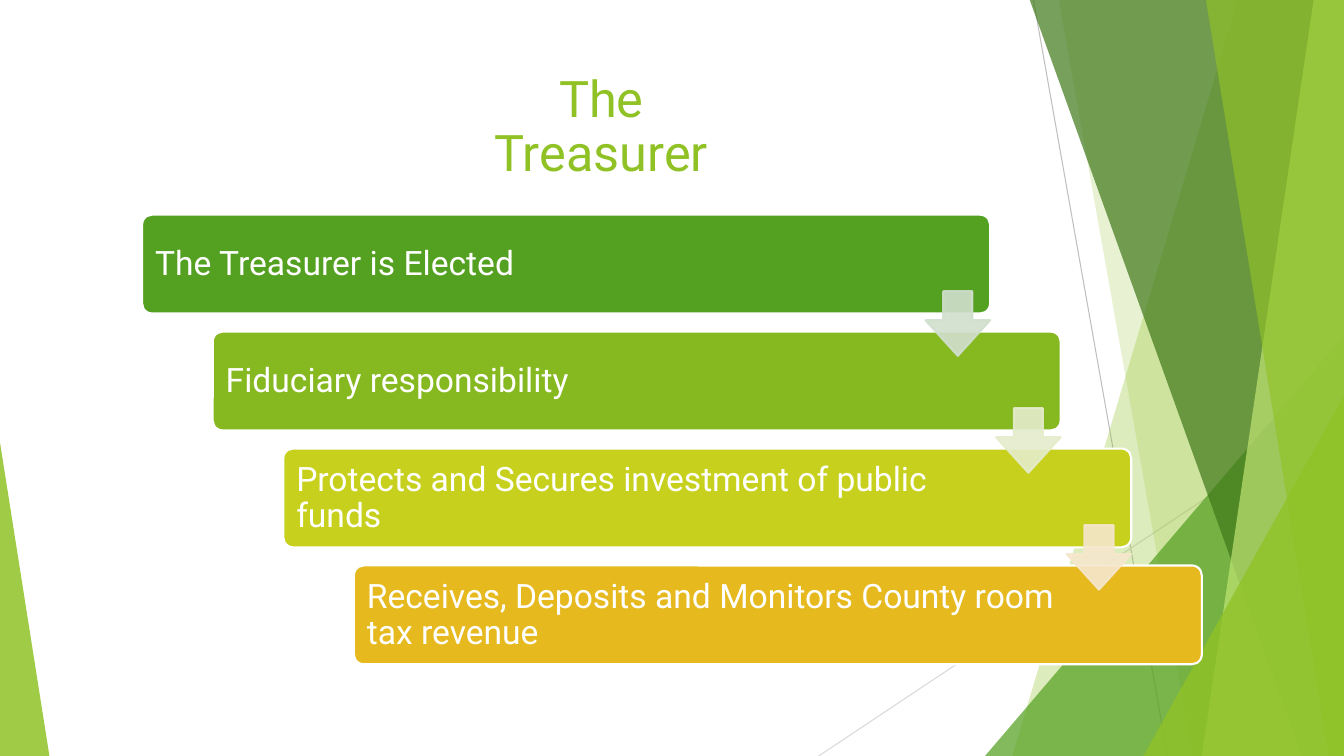
from typing import NamedTuple

from lxml import etree
from pptx import Presentation
from pptx.dml.color import RGBColor
from pptx.enum.shapes import MSO_CONNECTOR, MSO_SHAPE
from pptx.enum.text import MSO_ANCHOR, PP_ALIGN
from pptx.oxml.ns import qn
from pptx.util import Emu, Pt

PX = 9144  # 100 px to the inch
WIDTH, HEIGHT = 1333, 750
FONT = "Roboto"
STRAIGHT = MSO_CONNECTOR.STRAIGHT
TRIANGLE = MSO_SHAPE.ISOSCELES_TRIANGLE
ROUNDED = MSO_SHAPE.ROUNDED_RECTANGLE
DOWN_ARROW = MSO_SHAPE.DOWN_ARROW
LEFT, CENTER = PP_ALIGN.LEFT, PP_ALIGN.CENTER
MIDDLE = MSO_ANCHOR.MIDDLE

COLORS = {
    "white": "FFFFFF", "gray": "BFBFBF", "light gray": "D9D9D9",
    "lime": "90C226", "green": "54A021", "dark green": "3F7819",
    "pale lime": "C0E474", "leaf": "86B820", "yellow green": "C7D01D",
    "gold": "E6B91E", "pale green": "D1DFCD", "pale leaf": "E5ECCB",
    "pale gold": "F5E7CD",
}


class Box(NamedTuple):
    left: int
    top: int
    width: int
    height: int

    def moved(self, dx: int, dy: int) -> "Box":
        return Box(self.left + dx, self.top + dy, self.width, self.height)

    def emu(self) -> list[Emu]:
        return [Emu(length * PX) for length in self]


class Ray(NamedTuple):
    start: tuple[int, int]
    end: tuple[int, int]
    color: str


class Band(NamedTuple):
    """A strip from the slide's top to its bottom, closed by the right edge."""
    top_x: int
    bottom_x: int
    color: str
    opacity: int


class Corner(NamedTuple):
    box: Box
    peak: float
    color: str
    opacity: int


class Step(NamedTuple):
    text: str
    color: str
    arrow_color: str | None


RAYS = [
    Ray((1025, 0), (1158, HEIGHT), "gray"),
    Ray((WIDTH, 403), (812, HEIGHT), "light gray"),
]
FACETS = [
    Band(1228, 1004, "lime", 30),
    Band(1050, 1183, "lime", 20),
    Corner(Box(977, 333, 356, 417), 1, "green", 72),
    Band(1021, 1291, "dark green", 70),
    Band(1303, 1192, "pale lime", 70),
    Band(1196, 1318, "lime", 65),
    Corner(Box(1134, 393, 199, 357), 1, "lime", 80),
    Corner(Box(0, 439, 49, 311), 0, "lime", 85),
]
STEPS = [
    Step("The Treasurer is Elected", "green", "pale green"),
    Step("Fiduciary responsibility", "leaf", "pale leaf"),
    Step("Protects and Secures investment of public funds",
         "yellow green", "pale gold"),
    Step("Receives, Deposits and Monitors County room tax revenue",
         "gold", None),
]
TITLE_BOX = Box(0, 67, 1193, 120)
FIRST_CARD = Box(141, 213, 841, 98)
FIRST_LABEL = Box(144, 216, 702, 93)
FIRST_ARROW = Box(918, 289, 64, 64)
STEP_RIGHT, STEP_DOWN = 70, 116


def rgb(color: str) -> RGBColor:
    return RGBColor.from_string(COLORS[color])


def set_opacity(shape, opacity: int) -> None:
    """Apply one opacity to every solid colour of the fill and line."""
    for color in shape._element.spPr.iter(qn("a:srgbClr")):
        etree.SubElement(color, qn("a:alpha"), val=str(opacity * 1000))


def paint(shape, color: str, outline: str | None = None,
          opacity: int = 100) -> None:
    shape.shadow.inherit = False
    shape.fill.solid()
    shape.fill.fore_color.rgb = rgb(color)
    if outline:
        shape.line.color.rgb = rgb(outline)
        shape.line.width = Pt(1.5)
    else:
        shape.line.fill.background()
    if opacity < 100:
        set_opacity(shape, opacity)


def add_preset(shapes, preset, box: Box, adjustments: list[float], color: str,
               outline: str | None = None, opacity: int = 100) -> None:
    shape = shapes.add_shape(preset, *box.emu())
    for index, value in enumerate(adjustments):
        shape.adjustments[index] = value
    paint(shape, color, outline, opacity)


def add_ray(shapes, ray: Ray) -> None:
    ends = [Emu(value * PX) for value in ray.start + ray.end]
    line = shapes.add_connector(STRAIGHT, *ends)
    line.line.color.rgb = rgb(ray.color)
    line.line.width = Pt(0.75)
    etree.SubElement(line._element.spPr, qn("a:effectLst"))


def add_facet(shapes, facet: Band | Corner) -> None:
    if isinstance(facet, Corner):
        add_preset(shapes, TRIANGLE, facet.box, [facet.peak], facet.color,
                   opacity=facet.opacity)
        return
    outline = shapes.build_freeform(facet.top_x, -1, scale=PX)
    outline.add_line_segments(
        [(WIDTH, -1), (WIDTH, HEIGHT), (facet.bottom_x, HEIGHT)], close=True)
    paint(outline.convert_to_shape(), facet.color, opacity=facet.opacity)


def add_text(shapes, text: str, box: Box, *, size: int, color: str,
             align=LEFT, inset: int = 10) -> None:
    frame = shapes.add_textbox(*box.emu()).text_frame
    frame.word_wrap = True
    frame.vertical_anchor = MIDDLE
    frame.margin_left = frame.margin_right = Emu(inset * PX)
    frame.margin_top = frame.margin_bottom = Emu(inset * PX)
    paragraph = frame.paragraphs[0]
    paragraph.text = text
    paragraph.alignment = align
    paragraph.line_spacing = 0.9
    for run in paragraph.runs:
        run.font.name = FONT
        run.font.size = Pt(size)
        run.font.color.rgb = rgb(color)


def add_steps(shapes) -> None:
    for index, step in enumerate(STEPS):
        offset = (index * STEP_RIGHT, index * STEP_DOWN)
        add_preset(shapes, ROUNDED, FIRST_CARD.moved(*offset), [0.1],
                   step.color, outline="white")
        add_text(shapes, step.text, FIRST_LABEL.moved(*offset),
                 size=24, color="white")
    for index, step in enumerate(STEPS):
        if step.arrow_color:
            box = FIRST_ARROW.moved(index * STEP_RIGHT, index * STEP_DOWN)
            add_preset(shapes, DOWN_ARROW, box, [0.45, 0.55],
                       step.arrow_color, step.arrow_color, opacity=90)


def main() -> None:
    deck = Presentation()
    deck.slide_width, deck.slide_height = Emu(WIDTH * PX), Emu(HEIGHT * PX)
    shapes = deck.slides.add_slide(deck.slide_layouts[6]).shapes
    for ray in RAYS:
        add_ray(shapes, ray)
    for facet in FACETS:
        add_facet(shapes, facet)
    add_text(shapes, "The\nTreasurer", TITLE_BOX, size=36, color="lime",
             align=CENTER, inset=5)
    add_steps(shapes)
    deck.save("out.pptx")


if __name__ == "__main__":
    main()
